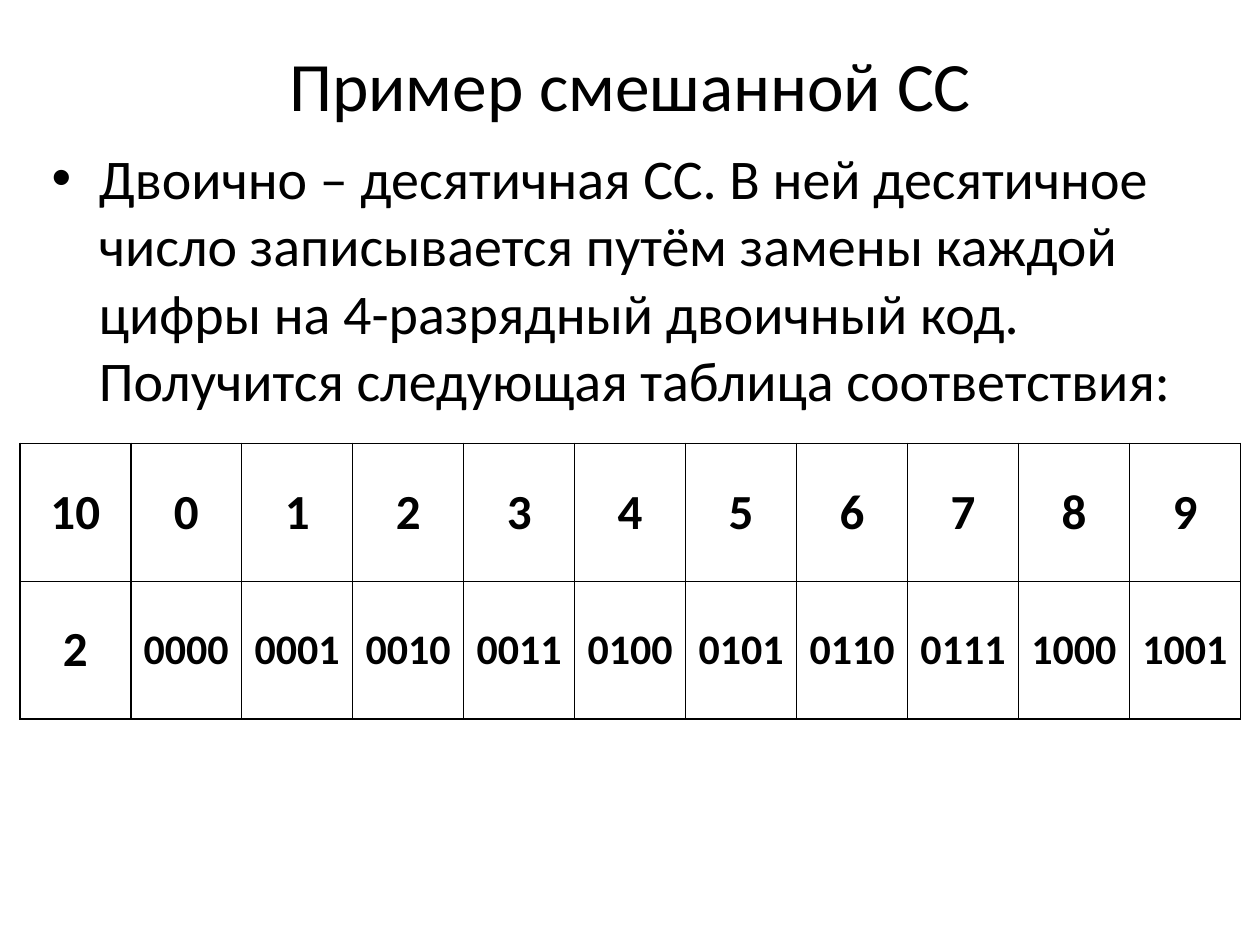
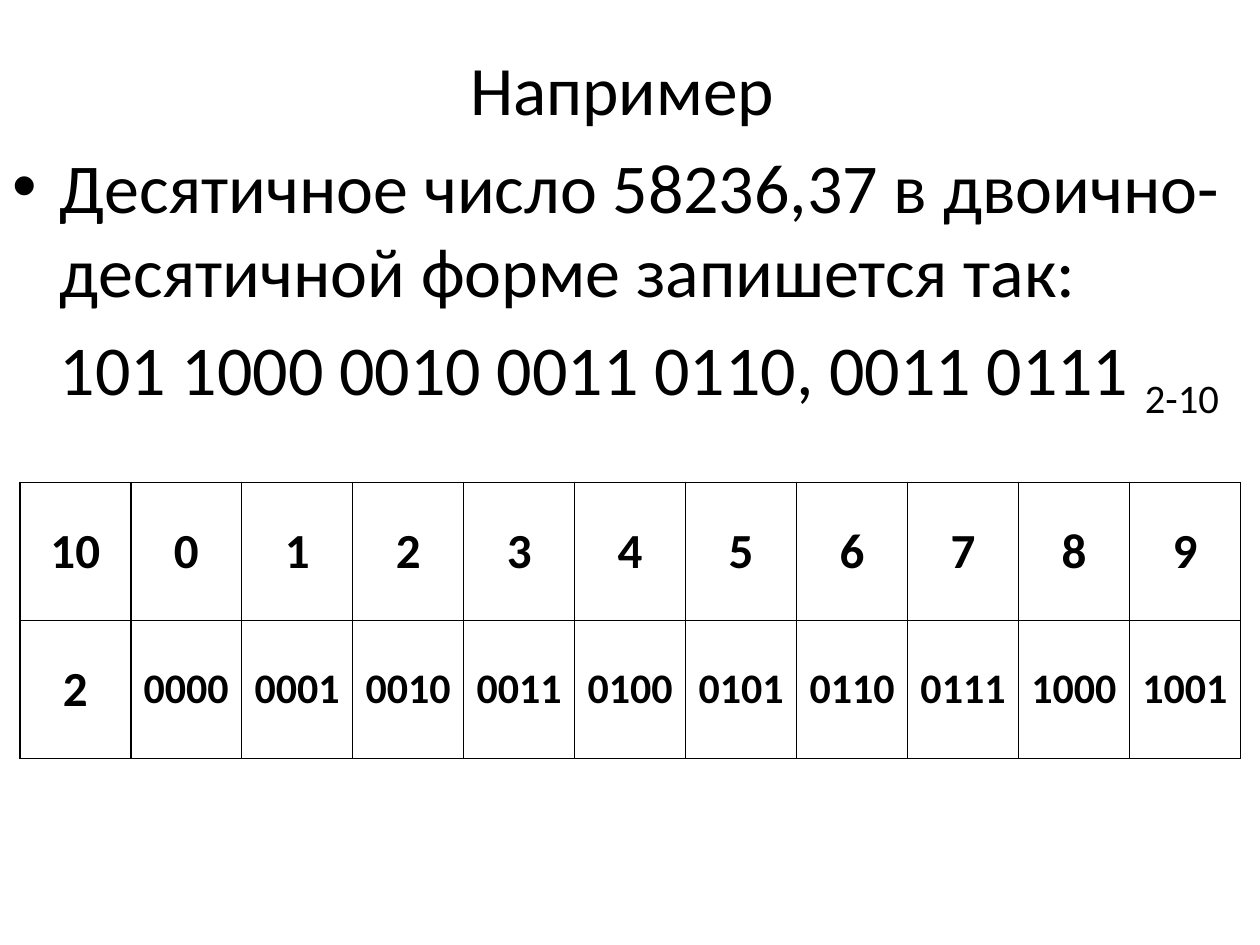
from dataclasses import dataclass

from lxml import etree
from pptx import Presentation
from pptx.dml.color import RGBColor
from pptx.enum.text import MSO_ANCHOR, MSO_AUTO_SIZE, PP_ALIGN
from pptx.oxml.ns import qn
from pptx.util import Pt

CENTER = PP_ALIGN.CENTER
MIDDLE = MSO_ANCHOR.MIDDLE
NO_AUTOFIT = MSO_AUTO_SIZE.NONE
TITLE_AND_BODY = 1


@dataclass(frozen=True)
class Theme:
    font: str = "Calibri"
    ink: RGBColor = RGBColor(0, 0, 0)
    paper: RGBColor = RGBColor(255, 255, 255)
    title_size: float = 39.6
    body_size: float = 32
    example_size: float = 40
    digit_size: float = 28
    code_size: float = 24
    indent: float = 27
    border_width: float = 1


class Deck:
    def __init__(self, theme):
        self.theme = theme
        self.presentation = Presentation()
        self.presentation.slide_width = Pt(720)
        self.presentation.slide_height = Pt(540)
        self.slide = None

    def add_slide(self):
        layout = self.presentation.slide_layouts[TITLE_AND_BODY]
        self.slide = self.presentation.slides.add_slide(layout)
        fill = self.slide.background.fill
        fill.solid()
        fill.fore_color.rgb = self.theme.paper

    def set_font(self, paragraph, size, bold=False):
        font = paragraph.font
        font.name = self.theme.font
        font.size = Pt(size)
        font.bold = bold
        font.color.rgb = self.theme.ink

    def place(self, shape, left, top, width, height):
        shape.left, shape.top = Pt(left), Pt(top)
        shape.width, shape.height = Pt(width), Pt(height)
        shape.text_frame.word_wrap = True
        shape.text_frame.auto_size = NO_AUTOFIT

    def title(self, text, height):
        shape = self.slide.shapes.title
        self.place(shape, 36, 21.6, 648, height)
        shape.text_frame.vertical_anchor = MIDDLE
        paragraph = shape.text_frame.paragraphs[0]
        paragraph.text = text
        paragraph.alignment = CENTER
        self.set_font(paragraph, self.theme.title_size)

    def body(self, text, box, size):
        """Fill the body with one bulleted paragraph and return its text frame."""
        shape = self.slide.placeholders[1]
        self.place(shape, *box)
        paragraph = shape.text_frame.paragraphs[0]
        paragraph.text = text
        paragraph.space_before = Pt(0)
        self.set_font(paragraph, size)
        return shape.text_frame

    def number_line(self, text_frame, number, base, size):
        """Add an unbulleted number with its base as a subscript."""
        paragraph = text_frame.add_paragraph()
        properties = paragraph._p.get_or_add_pPr()
        properties.set("marL", str(Pt(self.theme.indent)))
        properties.set("indent", "0")
        etree.SubElement(properties, qn("a:buNone"))
        paragraph.space_before = Pt(0.2 * size)
        self.set_font(paragraph, size)
        paragraph.add_run().text = number
        subscript = paragraph.add_run()
        subscript.text = base
        subscript._r.get_or_add_rPr().set("baseline", "-25000")

    def border(self, cell):
        properties = cell._tc.get_or_add_tcPr()
        for side in ("lnL", "lnR", "lnT", "lnB"):
            line = etree.SubElement(properties, qn(f"a:{side}"),
                                    w=str(Pt(self.theme.border_width)))
            fill = etree.SubElement(line, qn("a:solidFill"))
            etree.SubElement(fill, qn("a:srgbClr"), val=str(self.theme.ink))

    def cell(self, cell, text, size):
        self.border(cell)
        cell.fill.solid()
        cell.fill.fore_color.rgb = self.theme.paper
        cell.vertical_anchor = MIDDLE
        cell.margin_left = cell.margin_right = Pt(5)
        paragraph = cell.text_frame.paragraphs[0]
        paragraph.text = text
        paragraph.alignment = CENTER
        self.set_font(paragraph, size, bold=True)

    def code_table(self, top):
        """Draw the decimal digits above their four-bit codes."""
        rows = [["10"] + [str(digit) for digit in range(10)],
                ["2"] + [f"{digit:04b}" for digit in range(10)]]
        frame = self.slide.shapes.add_table(2, 11, Pt(11.3), Pt(top),
                                            Pt(697.7), Pt(157.6))
        table = frame.table
        table.first_row = table.horz_banding = False
        for row_index, row in enumerate(rows):
            for column_index, text in enumerate(row):
                is_code = len(text) == 4
                size = self.theme.code_size if is_code else self.theme.digit_size
                self.cell(table.cell(row_index, column_index), text, size)


def main():
    theme = Theme()
    deck = Deck(theme)

    deck.add_slide()
    deck.title("Пример смешанной СС", height=52)
    deck.body("Двоично – десятичная СС. В ней десятичное число записывается "
              "путём замены каждой цифры на 4-разрядный двоичный код. "
              "Получится следующая таблица соответствия:",
              (22.3, 78.5, 661.7, 166.3), theme.body_size)
    deck.code_table(top=253.4)

    deck.add_slide()
    deck.title("Например ", height=57)
    text_frame = deck.body("Десятичное число 58236,37 в двоично-десятичной "
                           "форме запишется так:",
                           (0, 78.5, 720, 168.5), theme.example_size)
    deck.number_line(text_frame, "101 1000 0010 0011 0110, 0011 0111 ", "2-10",
                     theme.example_size)
    deck.code_table(top=275.8)

    deck.presentation.save("out.pptx")


if __name__ == "__main__":
    main()
